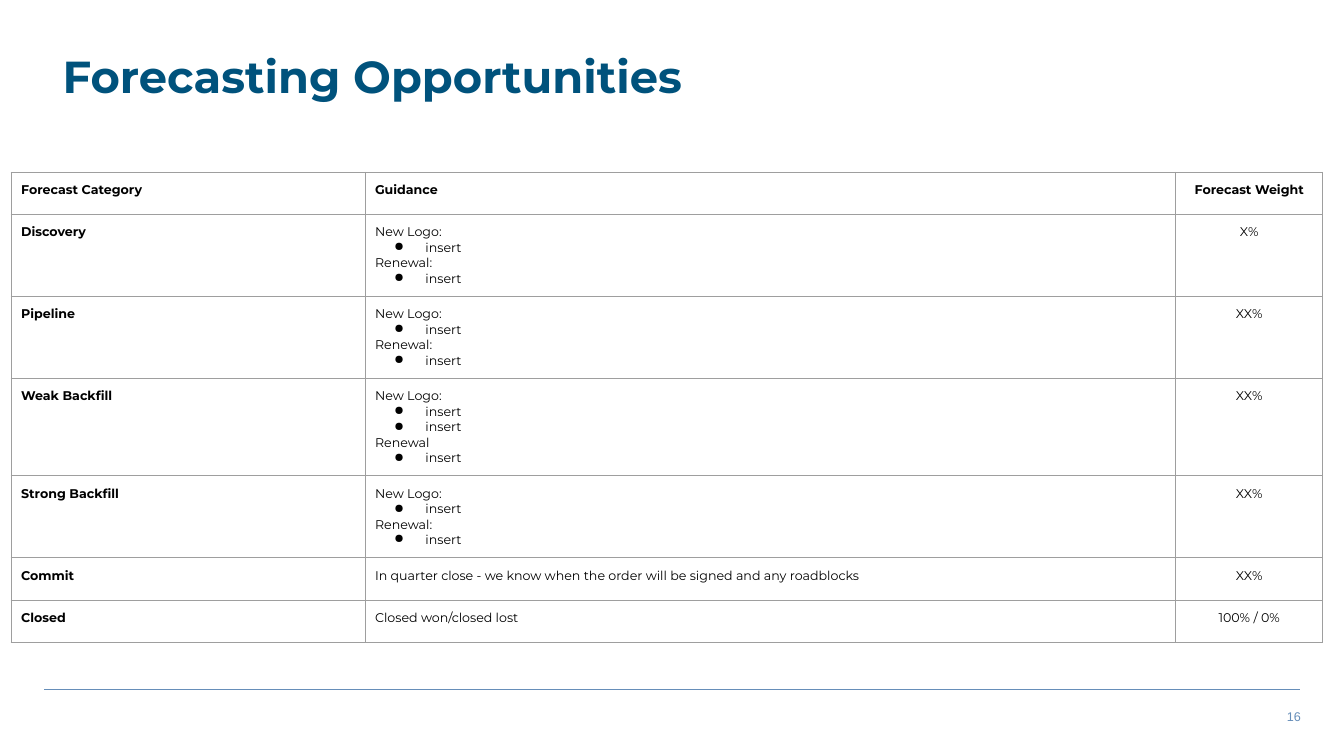
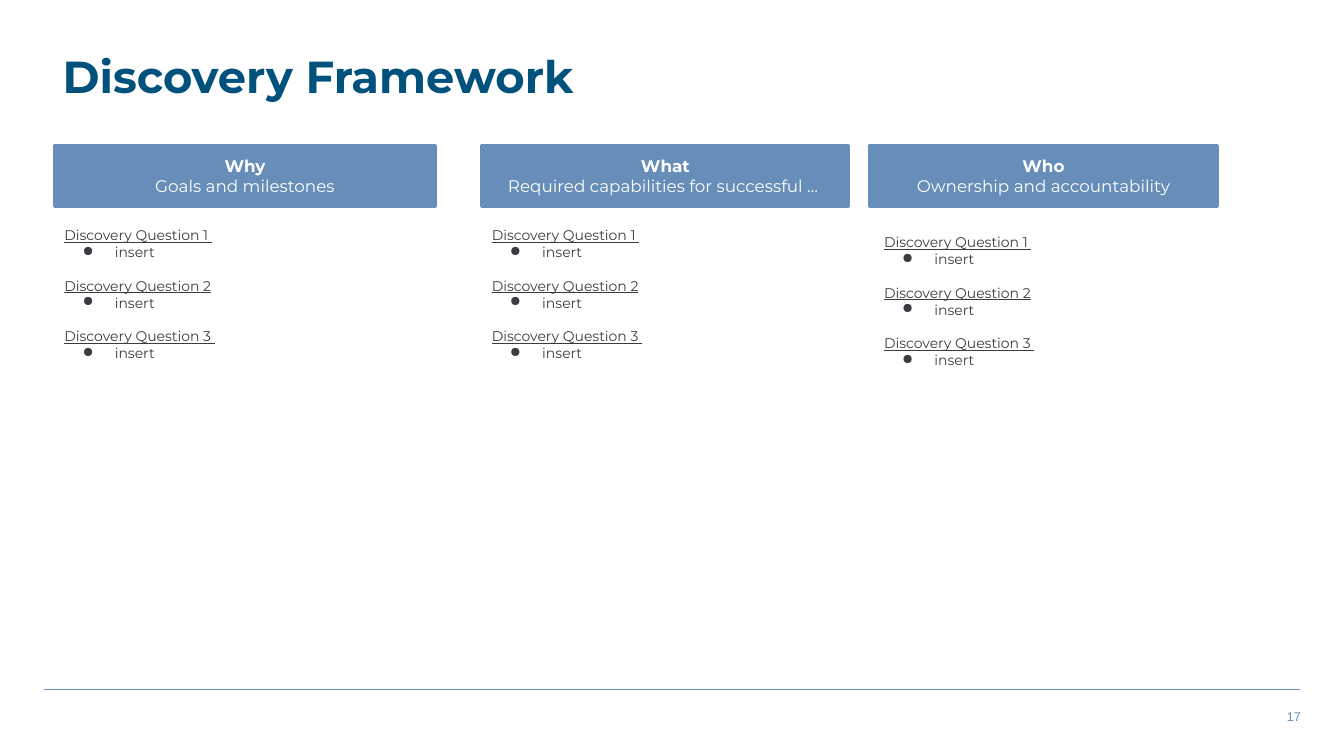
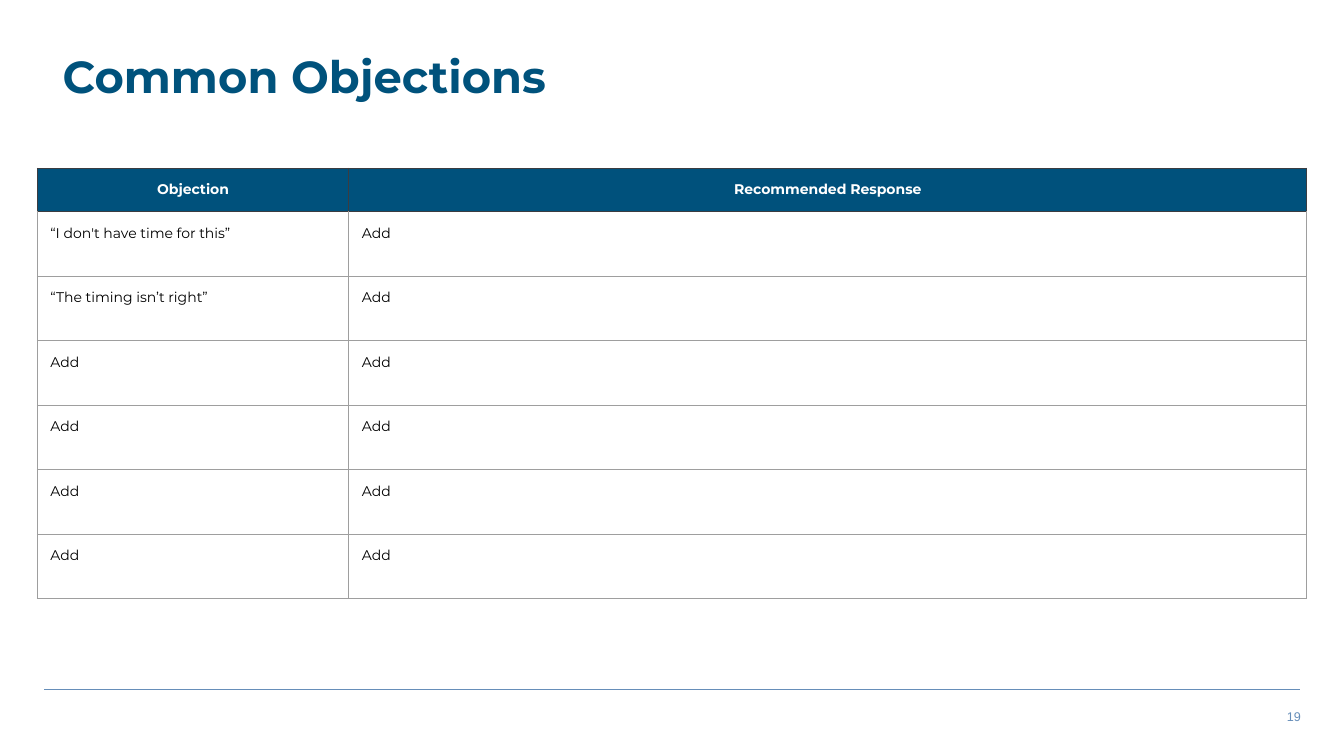
from pptx import Presentation
from pptx import util as u
from pptx.dml import color
from pptx.enum import shapes, text
from pptx.oxml import ns
from lxml import etree

I, Pt = u.Inches, u.Pt
NAVY, BLUE, HEAD = "00527C", "668EB9", "00517C"
INK, GRID, BLACK, WHITE = "3A3C41", "9E9E9E", "000000", "FFFFFF"
MID, TOP = text.MSO_ANCHOR.MIDDLE, text.MSO_ANCHOR.TOP
CEN, LEFT, RIGHT = text.PP_ALIGN.CENTER, text.PP_ALIGN.LEFT, text.PP_ALIGN.RIGHT
DOT = "●"

PAIR = ["New Logo:", "●insert", "Renewal:", "●insert"]
STAGES = [
    ("Forecast Category", ["Guidance"], "Forecast Weight"),
    ("Discovery", PAIR, "X%"),
    ("Pipeline", PAIR, "XX%"),
    ("Weak Backfill", ["New Logo:", "●insert", "●insert", "Renewal", "●insert"], "XX%"),
    ("Strong Backfill", PAIR, "XX%"),
    ("Commit", ["In quarter close - we know when the order will be signed and any roadblocks"], "XX%"),
    ("Closed", ["Closed won/closed lost"], "100% / 0%"),
]
THEMES = [
    ("Why", "Goals and milestones", 0.54, 3.78, (0.54, 2.15, 4.03)),
    ("What", "Required capabilities for successful … ", 4.78, 3.64, (4.78, 2.15, 3.29)),
    ("Who", "Ownership and accountability", 8.62, 3.46, (8.67, 2.22, 3.84)),
]
ASKS = ["Discovery Question 1 ", "Discovery Question 2", "Discovery Question 3 "]
DOUBTS = [
    ("Objection", "Recommended Response"),
    ("“I don't have time for this”", "Add"),
    ("“The timing isn’t right”", "Add"),
] + [("Add", "Add")] * 4


def rgb(hue):
    return color.RGBColor.from_string(hue)


def put(obj, vals):
    for key, val in vals.items():
        setattr(obj, key, val)


def sub(par, tag, **attrs):
    return etree.SubElement(par, ns.qn(tag), attrs)


def frame(tf, pad, tall=None, anchor=TOP):
    tall = pad if tall is None else tall
    put(tf, dict(margin_left=I(pad), margin_right=I(pad), margin_top=I(tall),
                 margin_bottom=I(tall), word_wrap=True, vertical_anchor=anchor,
                 auto_size=text.MSO_AUTO_SIZE.NONE))


def write(tf, lines, size, hue, align=LEFT, face="Montserrat", hang=0.31):
    for n, (words, look) in enumerate(lines):
        par = tf.paragraphs[0] if n == 0 else tf.add_paragraph()
        look = dict(look)
        put(par, dict(alignment=align, space_before=Pt(look.pop("gap", 0))))
        run = par.add_run()
        run.text = words.lstrip(DOT)
        put(run.font, dict(name=face, size=Pt(size), bold=False) | look)
        run.font.color.rgb = rgb(hue)
        if words.startswith(DOT):
            prop = par._p.get_or_add_pPr()
            prop.set("marL", str(I(0.5)))
            prop.set("indent", str(-I(hang)))
            sub(sub(prop, "a:buClr"), "a:srgbClr", val=hue)
            sub(prop, "a:buChar", char=DOT)


def paint(obj, hue):
    obj.fill.solid()
    obj.fill.fore_color.rgb = rgb(hue)


def start(deck, title, page):
    slide = deck.slides.add_slide(deck.slide_layouts[5])
    head = slide.shapes.title
    put(head, dict(left=I(0.52), top=I(0.43), width=I(9.49), height=I(0.64)))
    frame(head.text_frame, 0.1, 0.05, MID)
    write(head.text_frame, [(title, dict(bold=True))], 32, NAVY)
    rule = slide.shapes.add_connector(
        shapes.MSO_CONNECTOR.STRAIGHT, I(0.44), I(6.84), I(12.89), I(6.84))
    rule.line.width = Pt(1)
    rule.line.color.rgb = rgb(BLUE)
    sub(rule._element.spPr, "a:effectLst")
    foot = slide.shapes.add_textbox(I(7.67), I(6.98), I(5.33), I(0.25)).text_frame
    frame(foot, 0.1, 0.05)
    write(foot, [(str(page), {})], 9, BLUE, RIGHT, "Arial")
    return slide


def grid(slide, left, top, cols, rows):
    table = slide.shapes.add_table(
        len(rows), len(cols), I(left), I(top), I(sum(cols)), I(sum(rows))).table
    put(table, dict(first_row=False, horz_banding=False))
    for col, wide in zip(table.columns, cols):
        col.width = I(wide)
    for row, high in zip(table.rows, rows):
        row.height = I(high)
    return table


def dress(cell, pad, fill=WHITE, edge=GRID, top=None, anchor=TOP):
    put(cell, dict(margin_left=I(pad), margin_right=I(pad), margin_top=I(pad),
                   margin_bottom=I(pad), vertical_anchor=anchor))
    paint(cell, fill)
    prop = cell._tc.get_or_add_tcPr()
    for n, side in enumerate("LRTB"):
        line = etree.Element(ns.qn("a:ln" + side), w=str(Pt(0.75)))
        hue = top if top and side == "T" else edge
        sub(sub(line, "a:solidFill"), "a:srgbClr", val=hue)
        prop.insert(n, line)


def forecast(deck):
    slide = start(deck, "Forecasting Opportunities", 16)
    rows = [max(0.42, 0.2 + 0.15 * len(mid)) for _, mid, _ in STAGES]
    table = grid(slide, 0.11, 1.71, [3.51, 8.04, 1.46], rows)
    for r, (name, mid, share) in enumerate(STAGES):
        for c, lines in enumerate([[name], mid, [share]]):
            cell = table.cell(r, c)
            dress(cell, 0.1)
            look = dict(bold=r == 0 or c == 0)
            write(cell.text_frame, [(s, look) for s in lines], 9, BLACK,
                  CEN if c == 2 else LEFT)


def box(slide, left, top, wide, high, fill):
    shape = slide.shapes.add_shape(
        shapes.MSO_SHAPE.RECTANGLE, I(left), I(top), I(wide), I(high))
    shape.shadow.inherit = False
    paint(shape, fill)
    return shape


def discover(deck):
    slide = start(deck, "Discovery Framework", 17)
    asks = []
    for n, ask in enumerate(ASKS):
        asks += [(ask, dict(underline=True, gap=12 if n else 0)), ("●insert", {})]
    for name, goal, left, wide, (x, y, high) in THEMES:
        head = box(slide, left, 1.44, wide, 0.61, BLUE)
        head.line.color.rgb = rgb(BLUE)
        head.line.width = Pt(2.25)
        frame(head.text_frame, 0.1, anchor=MID)
        write(head.text_frame, [(name, dict(bold=True)), (goal, {})], 12, WHITE, CEN)
        body = box(slide, x, y, wide, high, WHITE)
        body.line.fill.background()
        frame(body.text_frame, 0.1)
        write(body.text_frame, asks, 10, INK, hang=0.32)


def object(deck):
    slide = start(deck, "Common Objections", 19)
    table = grid(slide, 0.37, 1.67, [3.09, 9.5], [0.43] + [0.64] * (len(DOUBTS) - 1))
    for r, row in enumerate(DOUBTS):
        for c, words in enumerate(row):
            cell = table.cell(r, c)
            if r == 0:
                dress(cell, 0.13, HEAD, INK, anchor=MID)
                write(cell.text_frame, [(words, dict(bold=True))], 10, WHITE, CEN)
            else:
                dress(cell, 0.13, top=INK if r == 1 else None)
                write(cell.text_frame, [(words, {})], 10, BLACK)


def main():
    deck = Presentation()
    put(deck, dict(slide_width=I(13.33), slide_height=I(7.5)))
    for make in (forecast, discover, object):
        make(deck)
    deck.save("out.pptx")


if __name__ == "__main__":
    main()
